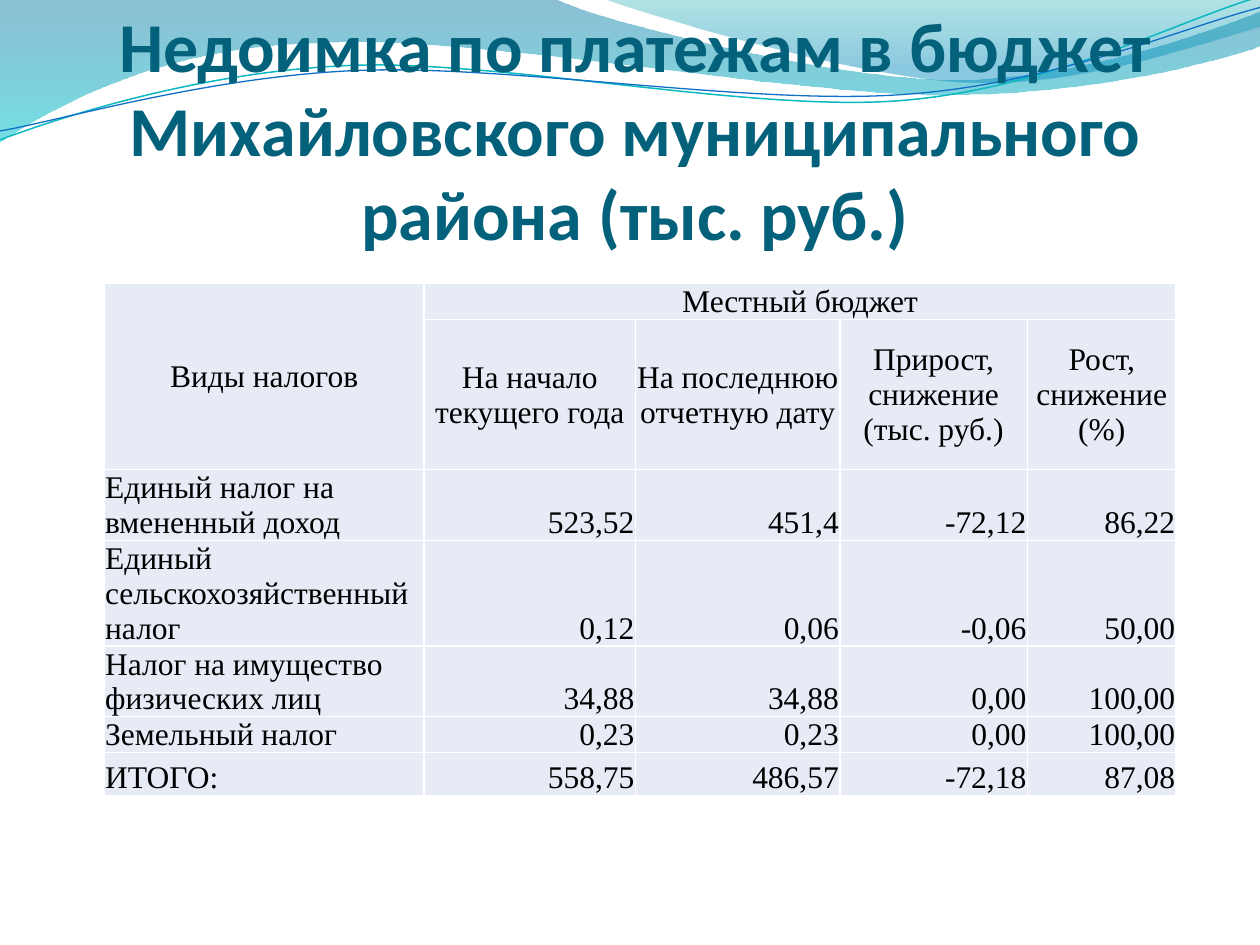
import math
import lxml.etree
import pptx
import pptx.util
import pptx.dml.color
import pptx.enum.text
import pptx.oxml.ns

Cm, Pt = pptx.util.Cm, pptx.util.Pt
ALIGN, ANCHOR = pptx.enum.text.PP_ALIGN, pptx.enum.text.MSO_ANCHOR
qn = pptx.oxml.ns.qn
INCH = 2.54
COLORS = {
    "title": "04617B", "text": "000000", "cell": "E7EBF5", "border": "FFFFFF",
    "deep": "0074A1", "aqua": "00C6CF", "teal": "00A1A9", "sky": "008BBF",
    "teal_line": "0AB8BF", "blue_line": "0F6FC6",
}

BROAD_WAVE = [
    [(0, 0)], [(4.4, -0.01)], [(4.76, 0.17), (6.64, 0.63), (7.58, 0.63)],
    [(8.53, 0.63), (9.58, 0.26), (10, 0.09)], [(10.01, 0.36)],
    [(9.83, 0.44), (8.7, 0.76), (7.46, 0.75)],
    [(6.22, 0.75), (3.82, 0.28), (2.57, 0.34)],
    [(1.29, 0.36), (0.46, 0.83), (-0.01, 1.13)]]
RIGHT_WAVE = [
    [(4.79, -0.01)], [(5.09, 0.11), (6.82, 0.62), (7.69, 0.65)],
    [(8.56, 0.69), (9.61, 0.32), (10, 0.21)], [(10, 0)]]
TEAL_CURVE = [
    [(0, 1.11)], [(0.48, 0.93), (1.58, 0.57), (2.77, 0.52)],
    [(3.95, 0.47), (5.93, 0.89), (7.13, 0.8)],
    [(8.33, 0.71), (9.38, 0.15), (9.98, -0.02)]]
BLUE_CURVE = [
    [(0, 1.04)], [(0.47, 0.96), (1.64, 0.61), (2.83, 0.56)],
    [(4.03, 0.51), (5.97, 0.84), (7.17, 0.75)],
    [(8.36, 0.67), (9.41, 0.21), (10, 0.06)]]
TILT = 2.7

COL_WIDTHS = [6.45, 4.26, 4.12, 3.78, 3]
ROW_HEIGHTS = [0.69, 3.02, 1.37, 2.08, 1.37, 0.69, 0.86]
ROWS = [
    ["Виды налогов", "Местный бюджет", "", "", ""],
    ["", "На начало текущего года", "На последнюю отчетную дату",
     "Прирост, снижение (тыс. руб.)", "Рост, снижение (%)"],
    ["Единый налог на вмененный доход", "523,52", "451,4", "-72,12", "86,22"],
    ["Единый сельскохозяйственный налог", "0,12", "0,06", "-0,06", "50,00"],
    ["Налог на имущество физических лиц", "34,88", "34,88", "0,00", "100,00"],
    ["Земельный налог", "0,23", "0,23", "0,00", "100,00"],
    ["ИТОГО:", "558,75", "486,57", "-72,18", "87,08"],
]


def rgb(name):
    """Return the named colour."""
    return pptx.dml.color.RGBColor.from_string(COLORS[name])


def turn(path, center, degrees):
    """Rotate a path clockwise about a center."""
    cx, cy = center
    cos, sin = math.cos(math.radians(degrees)), math.sin(math.radians(degrees))
    return [[(cx + (x - cx) * cos - (y - cy) * sin,
              cy + (x - cx) * sin + (y - cy) * cos) for x, y in seg]
            for seg in path]


def add_outline(shapes, path, left, top, close):
    """Draw straight and cubic segments, given in inches, from a box corner in cm."""
    emu = [[(Cm(left + x * INCH), Cm(top + y * INCH)) for x, y in seg] for seg in path]
    builder = shapes.build_freeform(*emu[0][-1])
    builder.add_line_segments([seg[-1] for seg in emu[1:]], close=close)
    sp = builder.convert_to_shape()
    sp.shadow.inherit = False
    lines = list(sp._element.iter(qn("a:lnTo")))
    for line, seg in zip(lines, emu[1:]):
        if len(seg) == 3:
            line.tag = qn("a:cubicBezTo")
            for i, (x, y) in enumerate(seg[:2]):
                pt = lxml.etree.Element(qn("a:pt"), x=str(x - sp.left), y=str(y - sp.top))
                line.insert(i, pt)
    return sp


def add_wave(shapes, path, left, top, stops):
    """Add a filled wave with a translucent vertical gradient."""
    sp = add_outline(shapes, path, left, top, True)
    sp.line.fill.background()
    sp.fill.gradient()
    sp.fill.gradient_angle = 270
    for stop, (position, color, _) in zip(sp.fill.gradient_stops, stops):
        stop.position = position
        stop.color.rgb = rgb(color)
    for clr, (_, _, opacity) in zip(sp._element.spPr.iter(qn("a:srgbClr")), stops):
        lxml.etree.SubElement(clr, qn("a:alpha"), val=str(opacity * 1000))


def add_curve(shapes, path, left, top, center, color, width):
    """Add a thin tilted curve."""
    sp = add_outline(shapes, turn(path, center, TILT), left, top, False)
    sp.rotation = 360 - TILT
    sp.fill.background()
    sp.line.color.rgb = rgb(color)
    sp.line.width = Pt(width)


def add_waves(s, left, top):
    """Add the wave band along the top edge."""
    add_wave(s.shapes, BROAD_WAVE, left, top, [(0, "deep", 45), (1, "aqua", 55)])
    add_wave(s.shapes, RIGHT_WAVE, left, top, [(0, "teal", 30), (0.8, "sky", 45)])
    curves = s.shapes.add_group_shape().shapes
    add_curve(curves, TEAL_CURVE, left, top, (4.99, 0.58), "teal_line", 0.85)
    add_curve(curves, BLUE_CURVE, left, top, (5, 0.59), "blue_line", 0.75)


def add_title(s, left, top, width, height):
    """Fill the title placeholder and bring it in front of the waves."""
    sp = s.shapes.title
    sp.left, sp.top, sp.width, sp.height = map(Cm, (left, top, width, height))
    sp._element.getparent().append(sp._element)
    tf = sp.text_frame
    tf.text = "Недоимка по платежам в бюджет Михайловского муниципального района (тыс. руб.)"
    tf.word_wrap = True
    tf.auto_size = pptx.enum.text.MSO_AUTO_SIZE.NONE
    tf.vertical_anchor = ANCHOR.BOTTOM
    tf.margin_left = tf.margin_right = tf.margin_bottom = 0
    tf.margin_top = Cm(0.13)
    p = tf.paragraphs[0]
    p.alignment = ALIGN.CENTER
    p.font.name, p.font.size, p.font.bold = "Calibri", Pt(40), True
    p.font.color.rgb = rgb("title")


def format_cell(cell, text, align, anchor):
    """Set the text, fill and borders of one cell."""
    cell.text = text
    cell.vertical_anchor = anchor
    cell.margin_left = cell.margin_right = cell.margin_top = Cm(0.02)
    cell.margin_bottom = 0
    cell.fill.solid()
    cell.fill.fore_color.rgb = rgb("cell")
    p = cell.text_frame.paragraphs[0]
    p.alignment = align
    p.font.name, p.font.size = "Times New Roman", Pt(18)
    p.font.color.rgb = rgb("text")
    tcPr = cell._tc.get_or_add_tcPr()
    for i, side in enumerate(("lnL", "lnR", "lnT", "lnB")):
        ln = lxml.etree.Element(qn("a:" + side), w=str(Pt(1)))
        fill = lxml.etree.SubElement(ln, qn("a:solidFill"))
        lxml.etree.SubElement(fill, qn("a:srgbClr"), val=COLORS["border"])
        tcPr.insert(i, ln)


def add_arrears_table(s, left, top):
    """Add the table of arrears by tax."""
    frame = s.shapes.add_table(
        len(ROWS), len(COL_WIDTHS), Cm(left), Cm(top),
        Cm(sum(COL_WIDTHS)), Cm(sum(ROW_HEIGHTS)))
    table = frame.table
    for column, width in zip(table.columns, COL_WIDTHS):
        column.width = Cm(width)
    for row, height in zip(table.rows, ROW_HEIGHTS):
        row.height = Cm(height)
    for i, values in enumerate(ROWS):
        for j, text in enumerate(values):
            if i < 2:
                align, anchor = ALIGN.CENTER, ANCHOR.MIDDLE
            else:
                align, anchor = ALIGN.RIGHT if j else ALIGN.LEFT, ANCHOR.BOTTOM
            format_cell(table.cell(i, j), text, align, anchor)
    table.cell(0, 0).merge(table.cell(1, 0))
    table.cell(0, 1).merge(table.cell(0, 4))


def main():
    """Build the slide and save it."""
    prs = pptx.Presentation()
    prs.slide_width, prs.slide_height = Cm(25.4), Cm(19.05)
    s = prs.slides.add_slide(prs.slide_layouts[5])
    add_waves(s, 0, 0)
    add_title(s, 1.27, 1.96, 23.06, 3.18)
    add_arrears_table(s, 2.1, 5.72)
    prs.save("out.pptx")


if __name__ == "__main__":
    main()
